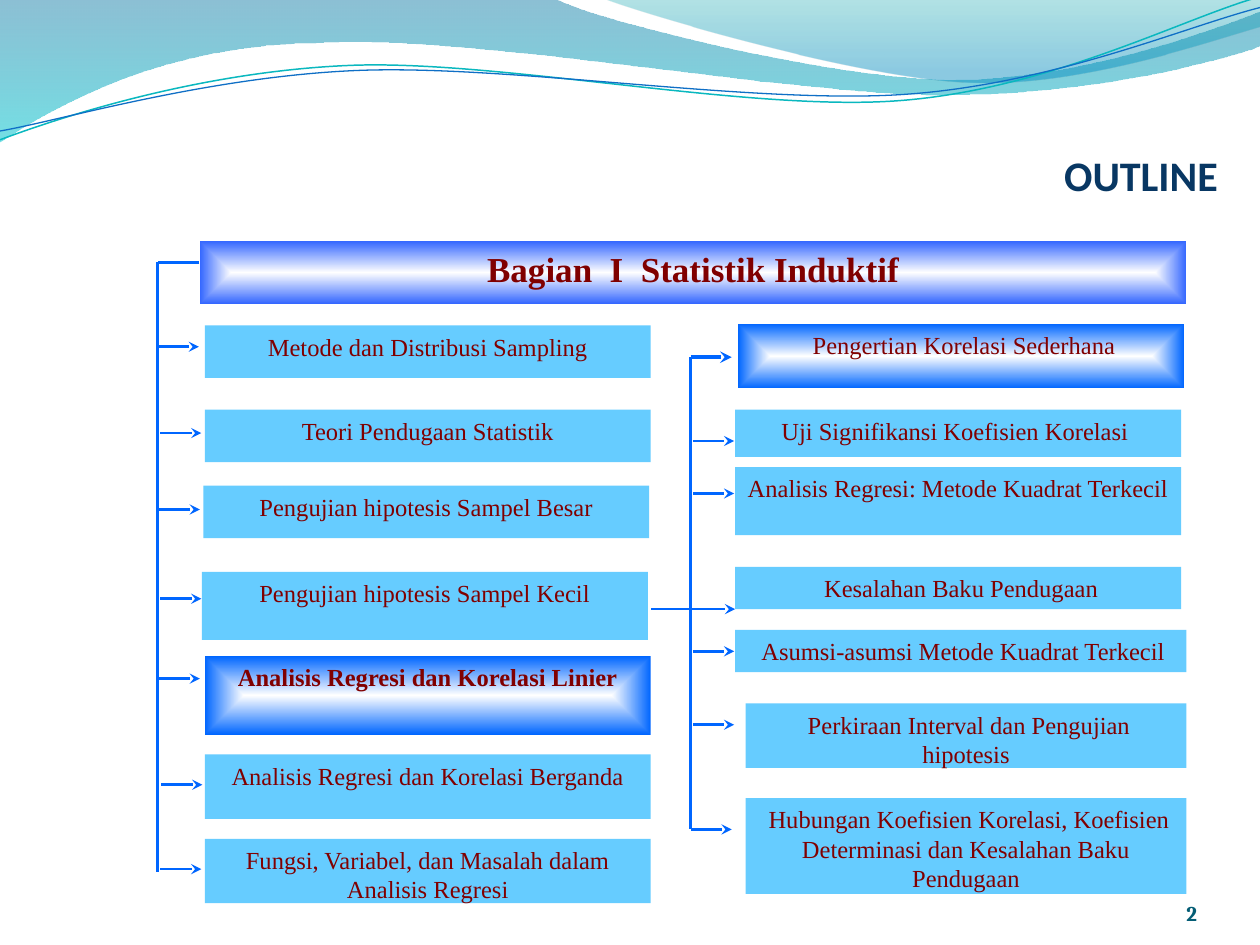
import pptx
import pptx.util
import pptx.dml.color
import pptx.enum.shapes
import pptx.enum.text
import pptx.oxml
import pptx.oxml.ns

Cm, Pt = pptx.util.Cm, pptx.util.Pt
RGBColor = pptx.dml.color.RGBColor
qn, parse_xml = pptx.oxml.ns.qn, pptx.oxml.parse_xml
NS = pptx.oxml.ns.nsdecls("a")
ALIGN, ANCHOR = pptx.enum.text.PP_ALIGN, pptx.enum.text.MSO_ANCHOR
RECT = pptx.enum.shapes.MSO_SHAPE.RECTANGLE
STRAIGHT = pptx.enum.shapes.MSO_CONNECTOR.STRAIGHT

WHITE = RGBColor(0xFF, 0xFF, 0xFF)
SKY = RGBColor(0x66, 0xCC, 0xFF)
BLUE = RGBColor(0x00, 0x66, 0xFF)
INDIGO = RGBColor(0x33, 0x66, 0xFF)
MAROON = RGBColor(0x80, 0x00, 0x00)
NAVY = RGBColor(0x08, 0x37, 0x63)
PETROL = RGBColor(0x04, 0x5D, 0x75)
SEA = RGBColor(0x00, 0x74, 0xA1)
CYAN = RGBColor(0x00, 0xC6, 0xCF)
TEAL = RGBColor(0x00, 0xA1, 0xA9)
AZURE = RGBColor(0x00, 0x8B, 0xBF)
CURVE_TEAL = RGBColor(0x0A, 0xB8, 0xBF)
CURVE_BLUE = RGBColor(0x0F, 0x6F, 0xC6)


def set_gradient(sp, stops, direction):
    """Fill sp with (position %, colour, opacity %) stops."""
    gs = "".join(
        f'<a:gs pos="{pos * 1000}"><a:srgbClr val="{color}">'
        f'<a:alpha val="{opacity * 1000}"/></a:srgbClr></a:gs>'
        for pos, color, opacity in stops)
    sp.fill.background()
    spPr = sp._element.spPr
    spPr.replace(spPr.find(qn("a:noFill")), parse_xml(
        f'<a:gradFill {NS} rotWithShape="1">'
        f'<a:gsLst>{gs}</a:gsLst>{direction}</a:gradFill>'))


def set_text(sp, text, align, color, frame, font):
    tf = sp.text_frame
    for name, value in {"word_wrap": True, **frame}.items():
        setattr(tf, name, value)
    p = tf.paragraphs[0]
    p.alignment = align
    r = p.add_run()
    r.text = text
    for name, value in font.items():
        setattr(r.font, name, value)
    r.font.color.rgb = color


prs = pptx.Presentation()
prs.slide_width, prs.slide_height = Cm(25.4), Cm(19.05)
s = prs.slides.add_slide(prs.slide_layouts[6])

# Waves: start point, then line ends (2 numbers) or Bezier curves (6 numbers)
UNIT = Cm(2.54)
DOWN = '<a:lin ang="5400000" scaled="0"/>'
waves = [
    ([(0, -0.01), (4.4, -0.01), (4.76, 0.17, 6.64, 0.63, 7.58, 0.63),
      (8.53, 0.63, 9.58, 0.26, 10, 0.09), (10.01, 0.36),
      (9.83, 0.44, 8.7, 0.76, 7.46, 0.75), (6.22, 0.75, 3.82, 0.28, 2.57, 0.34),
      (1.29, 0.35, 0.46, 0.83, -0.01, 1.13)],
     [(0, SEA, 45), (100, CYAN, 55)], None, None),
    ([(4.79, -0.01), (5.09, 0.11, 6.82, 0.62, 7.69, 0.65),
      (8.56, 0.69, 9.61, 0.32, 10, 0.21), (10, 0)],
     [(0, TEAL, 30), (80, AZURE, 45)], None, None),
    ([(0, 1.11), (0.48, 0.93, 1.58, 0.57, 2.77, 0.52),
      (3.95, 0.47, 5.93, 0.89, 7.13, 0.8), (8.33, 0.71, 9.38, 0.15, 9.98, -0.02)],
     None, CURVE_TEAL, 0.85),
    ([(0, 1.04), (0.47, 0.96, 1.64, 0.61, 2.83, 0.56),
      (4.03, 0.51, 5.97, 0.83, 7.17, 0.75), (8.36, 0.67, 9.41, 0.21, 10, 0.06)],
     None, CURVE_BLUE, 0.75),
]
for segments, stops, color, width in waves:
    points = [(round(seg[i] * UNIT), round(seg[i + 1] * UNIT))
              for seg in segments for i in range(0, len(seg), 2)]
    fb = s.shapes.build_freeform(*points[0])
    fb.add_line_segments(points[1:], close=stops is not None)
    sp = fb.convert_to_shape()
    # Join each three points of a curve into one Bezier segment
    steps = iter(list(sp._element.iter(qn("a:lnTo"))))
    for seg in segments[1:]:
        first = next(steps)
        if len(seg) == 6:
            curve = parse_xml(f"<a:cubicBezTo {NS}/>")
            first.addprevious(curve)
            for step in (first, next(steps), next(steps)):
                curve.append(step[0])
                step.getparent().remove(step)
    sp.shadow.inherit = False
    if stops:
        set_gradient(sp, stops, DOWN)
        sp.line.fill.background()
    else:
        sp.fill.background()
        sp.line.color.rgb = color
        sp.line.width = Pt(width)

# Title and page number
bottom = {"vertical_anchor": ANCHOR.BOTTOM, "margin_left": 0, "margin_right": 0,
          "margin_top": 0, "margin_bottom": 0}
for box, text, color, font in [
    ((1.49, 0.86, 23.06, 3.18), "OUTLINE", NAVY,
     {"name": "Calibri", "size": Pt(24), "bold": True}),
    ((22.02, 17.65, 2.11, 1.02), "2", PETROL,
     {"name": "Cambria", "size": Pt(12), "bold": True}),
]:
    sp = s.shapes.add_textbox(*map(Cm, box))
    set_text(sp, text, ALIGN.RIGHT, color, bottom, font)

# Topic boxes: left, top, width, height, text, size, bold, gradient edge
W = 8.99
topics = [
    (4.03, 4.86, 19.89, 1.27, "Bagian  I  Statistik Induktif", 20, True, INDIGO),
    (4.13, 6.56, W, 1.06, "Metode dan Distribusi Sampling", 14, False, None),
    (4.13, 8.26, W, 1.06, "Teori Pendugaan Statistik", 14, False, None),
    (4.1, 9.79, W, 1.06, "Pengujian hipotesis Sampel Besar", 14, False, None),
    (4.07, 11.53, W, 1.37, "Pengujian hipotesis Sampel Kecil", 14, False, None),
    (4.13, 13.23, W, 1.58, "Analisis Regresi dan Korelasi Linier", 14, True, BLUE),
    (4.13, 15.21, W, 1.3, "Analisis Regresi dan Korelasi Berganda", 14, False, None),
    (4.13, 16.91, W, 1.3, "Fungsi, Variabel, dan Masalah dalam Analisis Regresi",
     14, False, None),
    (14.88, 6.53, W, 1.3, " Pengertian Korelasi Sederhana", 14, False, BLUE),
    (14.82, 8.26, W, 0.95, "Uji Signifikansi Koefisien Korelasi ", 14, False, None),
    (14.82, 9.42, W, 1.37, "Analisis Regresi: Metode Kuadrat Terkecil", 14, False, None),
    (14.82, 11.43, W, 0.85, " Kesalahan Baku Pendugaan", 14, False, None),
    (14.82, 12.7, 9.1, 0.85, " Asumsi-asumsi Metode Kuadrat Terkecil", 14, False, None),
    (15.03, 14.18, 8.89, 1.3, " Perkiraan Interval dan Pengujian hipotesis",
     14, False, None),
    (15.03, 16.09, 8.89, 1.93, " Hubungan Koefisien Korelasi, Koefisien Determinasi "
     "dan Kesalahan Baku Pendugaan", 14, False, None),
]
CENTRE = ('<a:path path="shape"><a:fillToRect l="50000" t="50000" '
          'r="50000" b="50000"/></a:path>')
for *box, text, size, bold, edge in topics:
    sp = s.shapes.add_shape(RECT, *map(Cm, box))
    sp.shadow.inherit = False
    sp.line.fill.background()
    if edge:
        set_gradient(sp, [(0, WHITE, 100), (100, edge, 100)], CENTRE)
    else:
        sp.fill.solid()
        sp.fill.fore_color.rgb = SKY
    set_text(sp, text, ALIGN.CENTER, MAROON, {"vertical_anchor": ANCHOR.TOP},
             {"name": "Times New Roman", "size": Pt(size), "bold": bold})

# Trunk lines and arrows: x1, y1, x2, y2, width, arrowhead
ARROW = 0.83
lines = [(4.02, 5.29, 3.18, 5.29, 1.5, False),
         (3.18, 5.29, 3.18, 17.57, 1.5, False),
         (13.92, 7.2, 13.92, 16.72, 1.5, False),
         (13.13, 12.28, 14.82, 12.28, 1.5, True),
         (13.92, 7.2, 13.92 + ARROW, 7.2, 2.25, True)]
for x, y in [(3.18, 6.99), (3.23, 8.73), (3.2, 10.27), (3.23, 12.07), (3.2, 13.68),
             (3.25, 15.82), (3.23, 17.52), (13.97, 8.89), (13.97, 9.95),
             (13.97, 13.13), (13.97, 14.61), (13.92, 16.72)]:
    lines.append((x, y, x + ARROW, y, 1.5, True))
for *ends, width, head in lines:
    ln = s.shapes.add_connector(STRAIGHT, *map(Cm, ends))
    ln.line.color.rgb = BLUE
    ln.line.width = Pt(width)
    spPr = ln._element.spPr
    if head:
        spPr.find(qn("a:ln")).append(parse_xml(f'<a:tailEnd {NS} type="stealth"/>'))
    spPr.append(parse_xml(f"<a:effectLst {NS}/>"))

prs.save("out.pptx")
